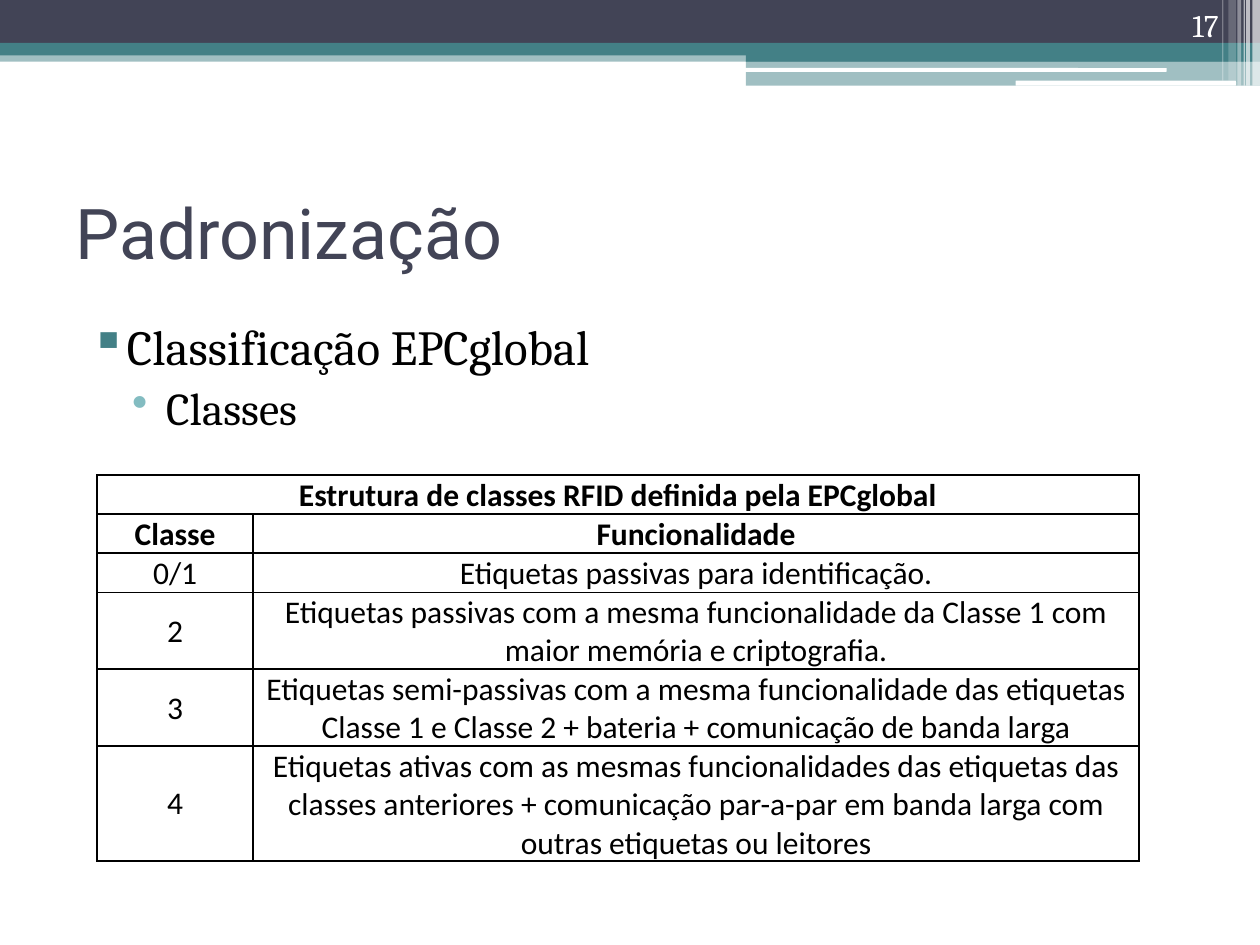
from lxml import etree
from pptx import Presentation
from pptx.dml.color import RGBColor
from pptx.enum import shapes, text
from pptx.oxml import ns
from pptx.util import Inches, Pt

NAVY, TEAL, AQUA, WHITE, BLACK = "424456", "438086", "83BCC1", "FFFFFF", "000000"
RECTANGLE = shapes.MSO_SHAPE.RECTANGLE
ROUNDED = shapes.MSO_SHAPE.ROUNDED_RECTANGLE
ALIGN, ANCHOR = text.PP_ALIGN, text.MSO_ANCHOR

CLASSES = [
    ("Classe", "Funcionalidade"),
    ("0/1", "Etiquetas passivas para identificação."),
    ("2", "Etiquetas passivas com a mesma funcionalidade da Classe 1 com "
          "maior memória e criptografia."),
    ("3", "Etiquetas semi-passivas com a mesma funcionalidade das etiquetas "
          "Classe 1 e Classe 2 + bateria + comunicação de banda larga"),
    ("4", "Etiquetas ativas com as mesmas funcionalidades das etiquetas das "
          "classes anteriores + comunicação par-a-par em banda larga com "
          "outras etiquetas ou leitores"),
]


def rgb(color):
    return RGBColor.from_string(color)


def child(parent, tag, **attributes):
    return etree.SubElement(parent, ns.qn(tag), attributes)


def add_run(paragraph, words, font, size, color, bold=False):
    run = paragraph.add_run()
    run.text = words
    run.font.name = font
    run.font.size = Pt(size)
    run.font.bold = bold
    run.font.color.rgb = rgb(color)


def add_bar(slide, box, color, opacity=100, kind=RECTANGLE):
    shape = slide.shapes.add_shape(kind, *map(Inches, box))
    shape.shadow.inherit = False
    shape.line.fill.background()
    shape.fill.solid()
    shape.fill.fore_color.rgb = rgb(color)
    if opacity < 100:
        fill = shape.fill._xPr.find(ns.qn("a:solidFill"))
        child(fill[0], "a:alpha", val=str(opacity * 1000))


def add_text_frame(slide, box, anchor=ANCHOR.TOP):
    frame = slide.shapes.add_textbox(*map(Inches, box)).text_frame
    frame.word_wrap = True
    frame.vertical_anchor = anchor
    return frame


def add_banner(slide, left, top, width):
    right = left + width
    half = left + 5.92
    # Full-width bands
    add_bar(slide, (left, top + 0.4, width, 0.09), TEAL, 50)
    add_bar(slide, (left, top, width, 0.34), NAVY)
    add_bar(slide, (left, top + 0.34, width, 0.1), TEAL)
    # Right-hand bands and white strips
    add_bar(slide, (half, top + 0.39, right - half, 0.1), TEAL)
    add_bar(slide, (half, top + 0.48, right - half, 0.2), TEAL, 50)
    add_bar(slide, (half - 0.01, top + 0.54, 3.35, 0.03), WHITE, kind=ROUNDED)
    add_bar(slide, (left + 8.06, top + 0.64, 1.75, 0.04), WHITE, kind=ROUNDED)
    # Translucent stripes: distance from the right edge, width, height, opacity
    for offset, stripe, height, opacity in [
        (0.06, 0.06, 0.68, 65), (0.11, 0.03, 0.68, 65), (0.13, 0.01, 0.68, 60),
        (0.18, 0.03, 0.68, 40), (0.25, 0.06, 0.64, 20), (0.3, 0.01, 0.64, 30),
    ]:
        add_bar(slide, (right - offset, top, stripe, height), WHITE, opacity)


def add_title(slide, box):
    frame = add_text_frame(slide, box, ANCHOR.MIDDLE)
    add_run(frame.paragraphs[0], "Padronização", "Roboto", 40, NAVY)


def add_bullets(slide, box):
    frame = add_text_frame(slide, box)
    bullets = [("Classificação EPCglobal", 28, 0.4, -0.28, "▪", TEAL),
               ("Classes", 26, 0.72, -0.27, "•", AQUA)]
    for level, (words, size, margin, indent, mark, color) in enumerate(bullets):
        paragraph = frame.add_paragraph() if level else frame.paragraphs[0]
        paragraph.level = level
        paragraph.space_before = Pt(3)
        properties = paragraph._p.get_or_add_pPr()
        properties.set("marL", str(Inches(margin)))
        properties.set("indent", str(Inches(indent)))
        child(child(properties, "a:buClr"), "a:srgbClr", val=color)
        child(properties, "a:buChar", char=mark)
        add_run(paragraph, words, "Cambria", size, BLACK)


def style_cell(cell):
    properties = cell._tc.get_or_add_tcPr()
    for side in ("a:lnL", "a:lnR", "a:lnT", "a:lnB"):
        line = child(properties, side, w=str(Pt(1)))
        child(child(line, "a:solidFill"), "a:srgbClr", val=BLACK)
    cell.fill.solid()
    cell.fill.fore_color.rgb = rgb(WHITE)
    cell.vertical_anchor = ANCHOR.MIDDLE
    cell.margin_left = cell.margin_right = cell.margin_top = Inches(0.01)
    cell.margin_bottom = 0


def add_class_table(slide, box):
    rows = [("Estrutura de classes RFID definida pela EPCglobal", "")] + CLASSES
    table = slide.shapes.add_table(len(rows), 2, *map(Inches, box)).table
    table.first_row = table.horz_banding = False
    for column, width in zip(table.columns, (1.24, box[2] - 1.24)):
        column.width = Inches(width)
    for row, lines in zip(table.rows, (1, 1, 1, 2, 2, 3)):
        row.height = Inches(0.01 + 0.3 * lines)
    table.cell(0, 0).merge(table.cell(0, 1))
    for row, values in enumerate(rows):
        for column, words in enumerate(values):
            cell = table.cell(row, column)
            style_cell(cell)
            if words:
                paragraph = cell.text_frame.paragraphs[0]
                paragraph.alignment = ALIGN.CENTER
                add_run(paragraph, words, "Calibri", 18, BLACK, bold=row < 2)


def add_page_number(slide, box):
    paragraph = add_text_frame(slide, box, ANCHOR.BOTTOM).paragraphs[0]
    paragraph.alignment = ALIGN.RIGHT
    add_run(paragraph, "17", "Cambria", 18, WHITE)


def main():
    presentation = Presentation()
    presentation.slide_width = Inches(10)
    presentation.slide_height = Inches(7.5)
    slide = presentation.slides.add_slide(presentation.slide_layouts[6])
    add_banner(slide, 0, 0, 10)
    add_title(slide, (0.5, 1.25, 9, 1.17))
    add_bullets(slide, (0.5, 2.46, 9, 4.73))
    add_class_table(slide, (0.77, 3.77, 8.27, 3.08))
    add_page_number(slide, (8.94, 0, 0.83, 0.4))
    presentation.save("out.pptx")


if __name__ == "__main__":
    main()
